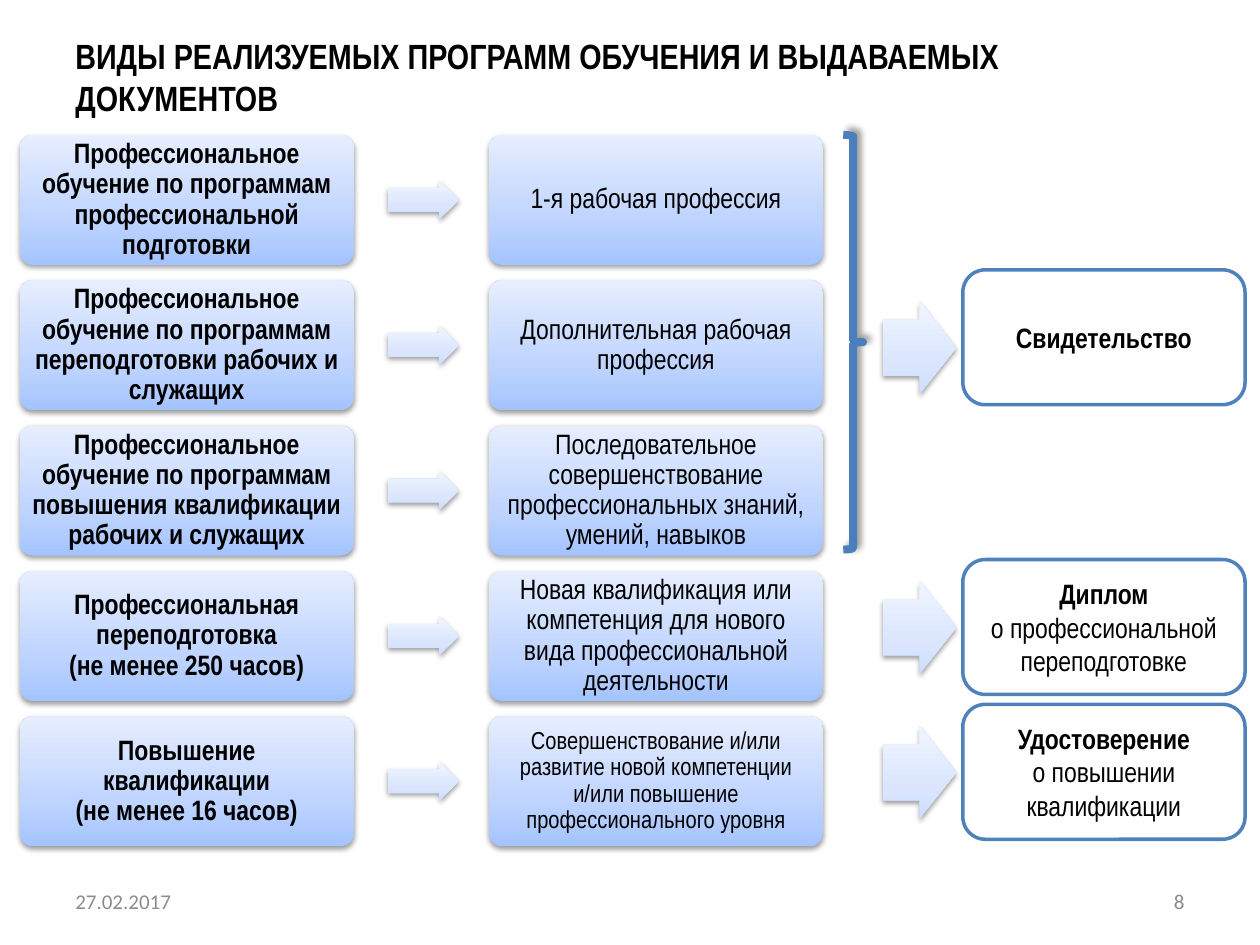
from copy import deepcopy
from pptx import Presentation
from pptx.dml.color import RGBColor
from pptx.enum.shapes import MSO_SHAPE
from pptx.enum.text import MSO_ANCHOR, PP_ALIGN
from pptx.oxml.ns import qn
from pptx.util import Cm, Pt
from lxml.etree import SubElement

TITLE = "ВИДЫ РЕАЛИЗУЕМЫХ ПРОГРАММ ОБУЧЕНИЯ И ВЫДАВАЕМЫХ ДОКУМЕНТОВ"
DATE, NUMBER = "27.02.2017", "8"
PROGRAMS = [
    ("Профессиональное обучение по программам профессиональной подготовки",
     "1-я рабочая профессия"),
    ("Профессиональное обучение по программам переподготовки рабочих и служащих",
     "Дополнительная рабочая профессия"),
    ("Профессиональное обучение по программам повышения квалификации рабочих и служащих",
     "Последовательное совершенствование профессиональных знаний, умений, навыков"),
    ("Профессиональная переподготовка\n(не менее 250 часов)",
     "Новая квалификация или компетенция для нового вида профессиональной деятельности"),
    ("Повышение квалификации\n(не менее 16 часов)",
     "Совершенствование и/или развитие новой компетенции и/или повышение профессионального уровня"),
]
DOCUMENTS = [
    (5.44, 6.07, "Свидетельство", ""),
    (11.28, 11.71, "Диплом", "о профессиональной переподготовке"),
    (14.2, 14.63, "Удостоверение", "о повышении квалификации"),
]
THEME = {
    "font": "Arial Narrow", "footer_font": "Calibri",
    "title": 20, "body": 16, "small": 14, "footer": 12,
    "text": "000000", "date": "8C8C8C", "number": "898989",
    "paper": "FFFFFF", "outline": "4F81BD", "brace": "4B7EBC",
    "box": [(0, "A4C4FF"), (0.35, "BFD4FF"), (1, "E6EEFF")],
    "arrow": [(0, "CDDDFE"), (0.35, "DBE6FE"), (1, "F0F5FF")],
}
SOFT = (38, 3.1, 1.6, 90)
DEEP = (40, 4, 3, 315)
TOP, PITCH = 2.72, 2.93
BOX_W, BOX_H = 6.73, 2.62
LEFT_X, ARROW_X, RIGHT_X = 0.4, 7.82, 9.86
ARROW_W, ARROW_H = 1.43, 0.79


def rgb(name):
    return RGBColor.from_string(THEME.get(name, name))


def add_shadow(sp, alpha, blur, dist, angle):
    effects = sp._element.spPr.find(qn("a:effectLst"))
    shadow = SubElement(effects, qn("a:outerShdw"), blurRad=str(Pt(blur)),
                        dist=str(Pt(dist)), dir=str(angle * 60000), rotWithShape="0")
    color = SubElement(shadow, qn("a:srgbClr"), val="000000")
    SubElement(color, qn("a:alpha"), val=str(alpha * 1000))


def add_shape(s, kind, x, y, w, h, adjust=(), line=None, width=2, shadow=None):
    sp = s.shapes.add_shape(kind, Cm(x), Cm(y), Cm(w), Cm(h))
    for i, value in enumerate(adjust):
        sp.adjustments[i] = value
    if line:
        sp.line.color.rgb = rgb(line)
        sp.line.width = Pt(width)
    else:
        sp.line.fill.background()
    sp.shadow.inherit = False
    if shadow:
        add_shadow(sp, *shadow)
    return sp


def fill_gradient(sp, stops):
    sp.fill.gradient()
    sp.fill.gradient_angle = 90
    stop_list = next(sp._element.spPr.iter(qn("a:gsLst")))
    stop_list.append(deepcopy(stop_list[-1]))
    for stop, (position, color) in zip(sp.fill.gradient_stops, stops):
        stop.position = position
        stop.color.rgb = rgb(color)


def write(sp, paragraphs, size="body", color="text", font="font",
          align=PP_ALIGN.CENTER, spacing=1, inset=None):
    tf = sp.text_frame
    tf.word_wrap = True
    tf.vertical_anchor = MSO_ANCHOR.MIDDLE
    if inset:
        tf.margin_left = tf.margin_right = tf.margin_top = tf.margin_bottom = Cm(inset)
    for i, (text, bold) in enumerate(paragraphs):
        p = tf.add_paragraph() if i else tf.paragraphs[0]
        p.alignment = align
        p.line_spacing = spacing
        for j, part in enumerate(text.split("\n")):
            if j:
                p.add_line_break()
            r = p.add_run()
            r.text = part
            r.font.name = THEME[font]
            r.font.size = Pt(THEME[size])
            r.font.bold = bold
            r.font.color.rgb = rgb(color)


def add_text(s, x, y, w, h, text, bold=False, **style):
    sp = s.shapes.add_textbox(Cm(x), Cm(y), Cm(w), Cm(h))
    write(sp, [(text, bold)], **style)


def add_arrow(s, x, y, w, h):
    sp = add_shape(s, MSO_SHAPE.RIGHT_ARROW, x, y, w, h, (0.6, 0.5), shadow=SOFT)
    fill_gradient(sp, THEME["arrow"])


def add_box(s, x, y, text, bold, size):
    sp = add_shape(s, MSO_SHAPE.ROUNDED_RECTANGLE, x, y, BOX_W, BOX_H, (0.1,), shadow=SOFT)
    fill_gradient(sp, THEME["box"])
    write(sp, [(text, bold)], size=size, spacing=0.9, inset=0.17)


def main():
    prs = Presentation()
    prs.slide_width, prs.slide_height = Cm(25.4), Cm(19.05)
    s = prs.slides.add_slide(prs.slide_layouts[6])
    add_text(s, 1.27, 0.76, 22.86, 1.55, TITLE, True, size="title", align=PP_ALIGN.LEFT)

    for i, (program, result) in enumerate(PROGRAMS):
        y = TOP + i * PITCH
        size = "small" if i == len(PROGRAMS) - 1 else "body"
        add_box(s, LEFT_X, y, program, True, "body")
        add_arrow(s, ARROW_X, y + (BOX_H - ARROW_H) / 2, ARROW_W, ARROW_H)
        add_box(s, RIGHT_X, y, result, False, size)

    brace = add_shape(s, MSO_SHAPE.RIGHT_BRACE, 17, TOP, 0.4, 8.36,
                      line="brace", width=4.5, shadow=DEEP)
    brace.fill.background()

    for y, arrow_y, name, detail in DOCUMENTS:
        add_arrow(s, 17.8, arrow_y, 1.48, 1.88)
        sp = add_shape(s, MSO_SHAPE.ROUNDED_RECTANGLE, 19.41, y, 5.69, 2.72, line="outline")
        sp.fill.solid()
        sp.fill.fore_color.rgb = rgb("paper")
        write(sp, [(name, True)] + ([(detail, False)] if detail else []))

    footer = {"size": "footer", "font": "footer_font"}
    add_text(s, 1.27, 17.66, 5.93, 1.01, DATE, color="date", align=PP_ALIGN.LEFT, **footer)
    add_text(s, 18.2, 17.66, 5.93, 1.01, NUMBER, color="number", align=PP_ALIGN.RIGHT, **footer)
    prs.save("out.pptx")


if __name__ == "__main__":
    main()
